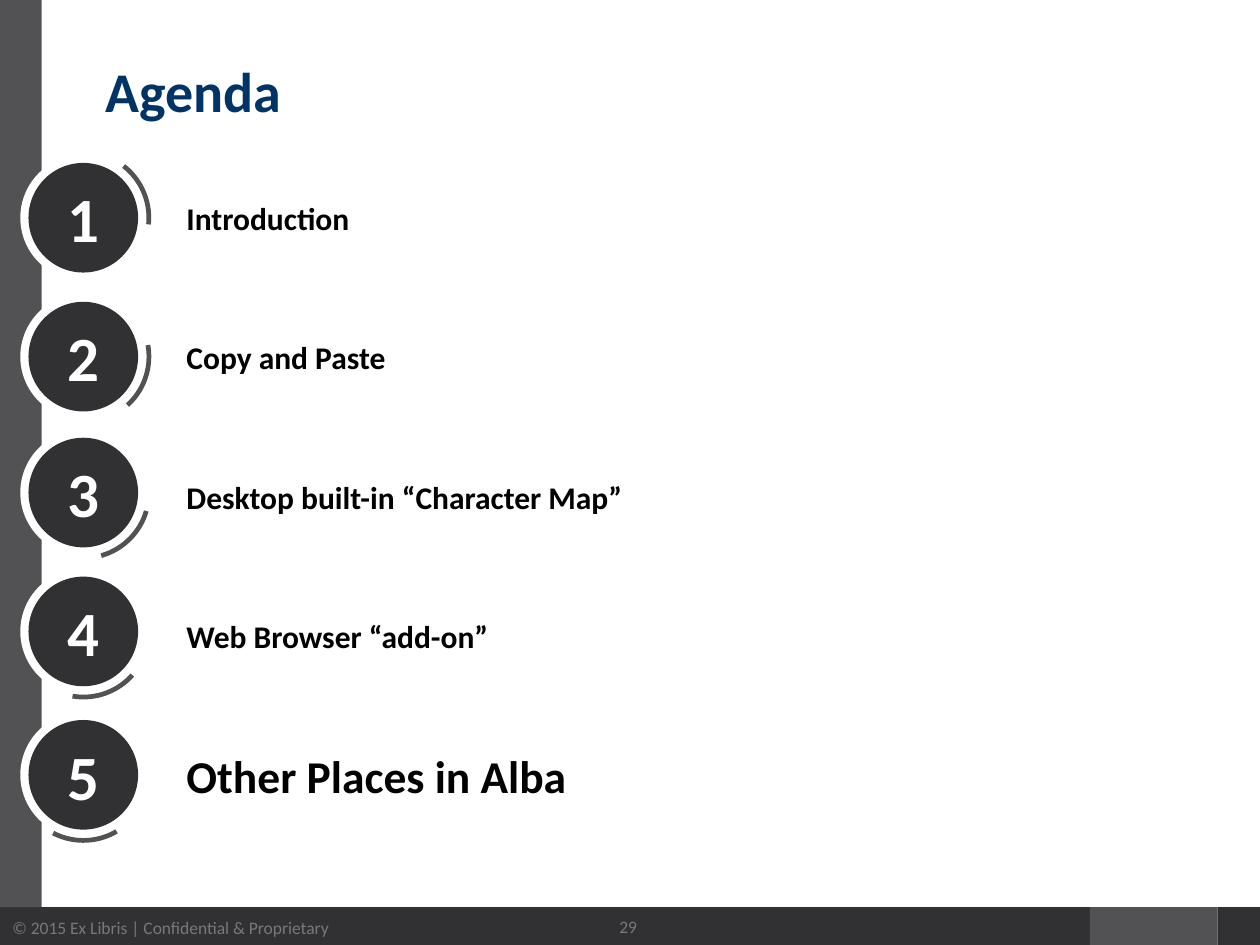
from pptx import Presentation
from pptx.dml.color import RGBColor
from pptx.enum.shapes import MSO_SHAPE
from pptx.enum.text import MSO_ANCHOR, PP_ALIGN
from pptx.util import Cm, Pt

DARK = RGBColor(0x31, 0x31, 0x33)
MID_GRAY = RGBColor(0x52, 0x52, 0x54)
FOOTER_GRAY = RGBColor(0x78, 0x78, 0x78)
NAVY = RGBColor(0x00, 0x34, 0x66)
BLACK = RGBColor(0, 0, 0)
WHITE = RGBColor(0xFF, 0xFF, 0xFF)

BADGE_CENTER_X = 1.68
LABEL_TOP, LABEL_PITCH = 3.5, 2.81

# Topic, font size, badge centre (cm from the top), arc rotation
AGENDA = [
    ("Introduction", 18, 4.39, 5.1),
    ("Copy and Paste", 18, 7.19, 47),
    ("Desktop built-in “Character Map”", 18, 9.93, 73.5),
    ("Web Browser “add-on”", 18, 12.73, 98.8),
    ("Other Places in Alba", 26, 15.62, 116.7),
]


def write_text(shape, text, *, size, color, bold=False, align=PP_ALIGN.LEFT,
               anchor=MSO_ANCHOR.MIDDLE, inset=None, line_spacing=None):
    frame = shape.text_frame
    frame.word_wrap = True
    frame.vertical_anchor = anchor
    if inset is not None:
        frame.margin_left = frame.margin_right = Cm(inset)
        frame.margin_top = frame.margin_bottom = Cm(inset)
    paragraph = frame.paragraphs[0]
    paragraph.alignment = align
    if line_spacing:
        paragraph.line_spacing = line_spacing
    run = paragraph.add_run()
    run.text = text
    run.font.name = "Calibri"
    run.font.size = Pt(size)
    run.font.bold = bold
    run.font.color.rgb = color


def add_text(slide, text, left, top, width, height, **text_format):
    box = slide.shapes.add_textbox(Cm(left), Cm(top), Cm(width), Cm(height))
    write_text(box, text, **text_format)


def add_filled(shapes, kind, left, top, width, height, color):
    shape = shapes.add_shape(kind, Cm(left), Cm(top), Cm(width), Cm(height))
    shape.shadow.inherit = False
    shape.fill.solid()
    shape.fill.fore_color.rgb = color
    shape.line.fill.background()
    return shape


def add_centered(shapes, kind, center_y, diameter, color):
    """Add a round shape centred on the badge column."""
    radius = diameter / 2
    return add_filled(shapes, kind, BADGE_CENTER_X - radius,
                      center_y - radius, diameter, diameter, color)


def add_badge(slide, number, center_y, rotation):
    shapes = slide.shapes.add_group_shape().shapes
    add_centered(shapes, MSO_SHAPE.OVAL, center_y, 2.54, WHITE)
    arc = add_centered(shapes, MSO_SHAPE.BLOCK_ARC, center_y, 2.74, MID_GRAY)
    for index, value in enumerate((181.725, 0.424, 0.035)):
        arc.adjustments[index] = value
    arc.rotation = rotation
    disc = add_centered(shapes, MSO_SHAPE.OVAL, center_y, 2.21, DARK)
    write_text(disc, str(number), size=36, color=WHITE, bold=True,
               align=PP_ALIGN.CENTER)


def add_frame(slide):
    """Add the side bar and the footer bar."""
    bars = [(0, 18.29, 21.97, 0.81, DARK), (21.97, 18.29, 2.57, 0.81, MID_GRAY),
            (24.54, 18.29, 0.86, 0.81, DARK), (0, 0, 0.84, 18.29, MID_GRAY)]
    footer, *_ = [add_filled(slide.shapes, MSO_SHAPE.RECTANGLE, *bar)
                  for bar in bars]
    write_text(footer, "© 2015 Ex Libris | Confidential & Proprietary",
               size=10, color=FOOTER_GRAY)


def main():
    presentation = Presentation()
    presentation.slide_width = Cm(25.4)
    presentation.slide_height = Cm(19.05)
    slide = presentation.slides.add_slide(presentation.slide_layouts[6])

    add_frame(slide)
    add_text(slide, "Agenda", 1.88, 1.17, 21.59, 3.02, size=32, color=NAVY,
             bold=True, anchor=MSO_ANCHOR.TOP, line_spacing=0.9)
    for index, (topic, size, center_y, rotation) in enumerate(AGENDA):
        add_badge(slide, index + 1, center_y, rotation)
        add_text(slide, topic, 3.63, LABEL_TOP + index * LABEL_PITCH,
                 15.42, 1.78, size=size, color=BLACK, bold=True, inset=0.13)
    add_text(slide, "29", 11.18, 18.19, 2.97, 0.99, size=10,
             color=FOOTER_GRAY, align=PP_ALIGN.CENTER)

    presentation.save("out.pptx")


if __name__ == "__main__":
    main()
